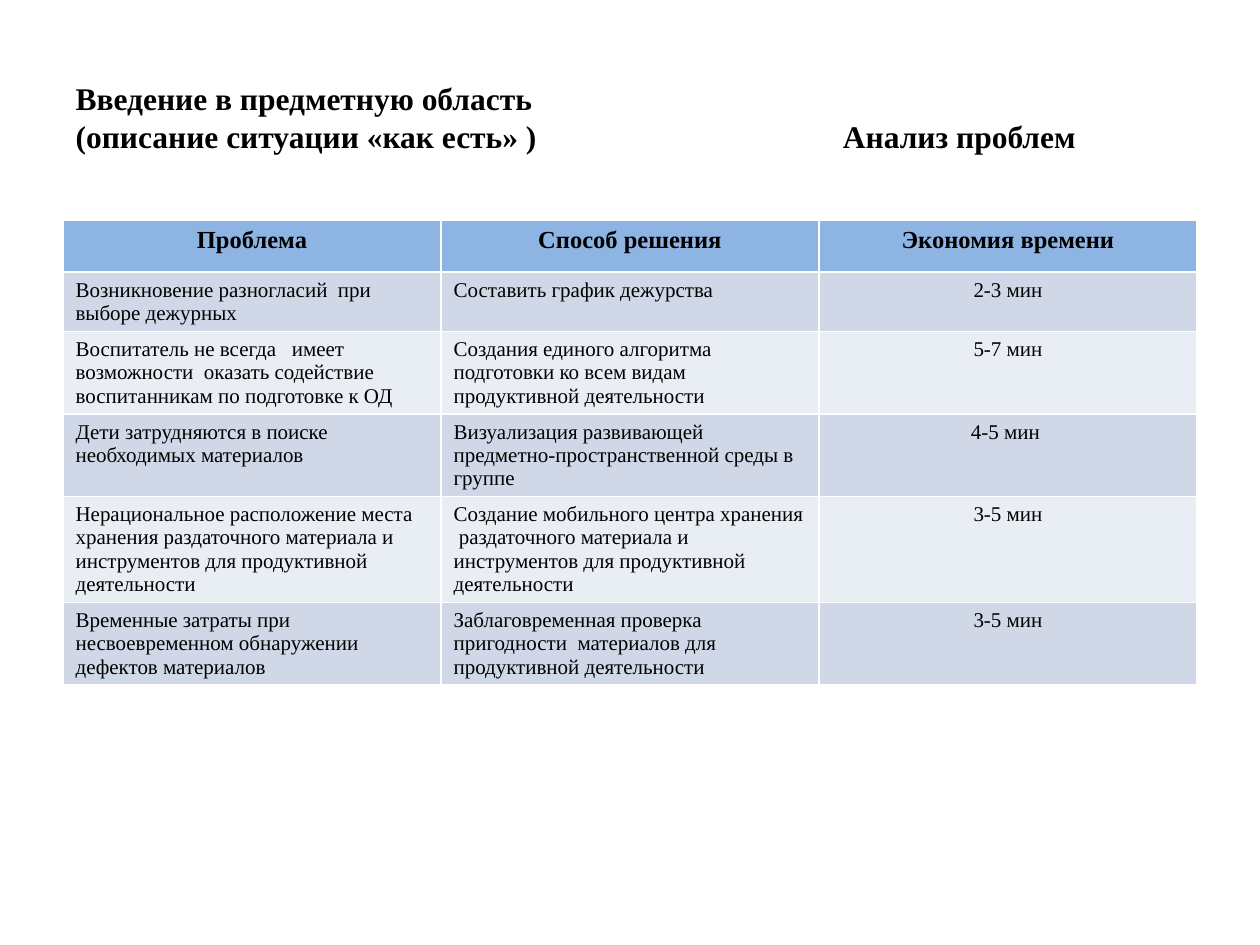
from dataclasses import dataclass

from lxml import etree
from pptx import Presentation, util as u
from pptx.dml.color import RGBColor
from pptx.enum import text
from pptx.oxml.ns import qn


@dataclass(frozen=True)
class Theme:
    font: str = "Times New Roman"
    ink: RGBColor = RGBColor(0, 0, 0)
    header_fill: RGBColor = RGBColor(0x8E, 0xB4, 0xE3)
    odd_fill: RGBColor = RGBColor(0xD0, 0xD8, 0xE8)
    even_fill: RGBColor = RGBColor(0xE9, 0xED, 0xF4)
    title_size: int = 18
    header_size: int = 14
    body_size: int = 12


THEME = Theme()

HEADINGS = ("Проблема", "Способ решения", "Экономия времени")
PROBLEMS = (
    ("Возникновение разногласий  при выборе дежурных",
     "Составить график дежурства",
     "2-3 мин"),
    ("Воспитатель не всегда   имеет возможности  оказать содействие "
     "воспитанникам по подготовке к ОД",
     "Создания единого алгоритма подготовки ко всем видам продуктивной деятельности",
     "5-7 мин"),
    ("Дети затрудняются в поиске необходимых материалов",
     "Визуализация развивающей предметно-пространственной среды в группе",
     "4-5 мин "),
    ("Нерациональное расположение места хранения раздаточного материала и "
     "инструментов для продуктивной деятельности",
     "Создание мобильного центра хранения\n"
     " раздаточного материала и инструментов для продуктивной деятельности",
     "3-5 мин"),
    ("Временные затраты при несвоевременном обнаружении дефектов материалов",
     "Заблаговременная проверка пригодности  материалов для продуктивной деятельности",
     "3-5 мин"),
)


def style_paragraph(para, size, bold, centred):
    para.alignment = text.PP_ALIGN.CENTER if centred else text.PP_ALIGN.LEFT
    para.font.name = THEME.font
    para.font.size = u.Pt(size)
    para.font.bold = bold
    para.font.color.rgb = THEME.ink


def add_tab_stop(para, position):
    properties = para._p.get_or_add_pPr()
    stops = etree.Element(qn("a:tabLst"))
    etree.SubElement(stops, qn("a:tab"), pos=str(int(position)), algn="l")
    # Tab stops come before the default run properties
    properties.insert(0, stops)


def place_title(page, left, top, width, height):
    title = page.shapes.title
    title.left, title.top, title.width, title.height = left, top, width, height
    frame = title.text_frame
    frame.word_wrap = True
    frame.vertical_anchor = text.MSO_ANCHOR.MIDDLE
    para = frame.paragraphs[0]
    para.text = "Введение в предметную область\v(описание ситуации «как есть» )\tАнализ проблем"
    style_paragraph(para, THEME.title_size, bold=True, centred=False)
    add_tab_stop(para, u.Inches(6.09))


def place_problem_table(page, left, top, width, row_height):
    rows = (HEADINGS,) + PROBLEMS
    columns = len(HEADINGS)
    table = page.shapes.add_table(
        len(rows), columns, left, top, width, row_height * len(rows)).table
    for row_index, row in enumerate(rows):
        is_header = row_index == 0
        if is_header:
            fill, size = THEME.header_fill, THEME.header_size
        else:
            fill = THEME.odd_fill if row_index % 2 else THEME.even_fill
            size = THEME.body_size
        for column, content in enumerate(row):
            cell = table.cell(row_index, column)
            cell.text = content
            cell.fill.solid()
            cell.fill.fore_color.rgb = fill
            centred = is_header or column == columns - 1
            for para in cell.text_frame.paragraphs:
                style_paragraph(para, size, is_header, centred)


def main():
    deck = Presentation()
    deck.slide_width, deck.slide_height = u.Inches(10), u.Inches(7.5)
    page = deck.slides.add_slide(deck.slide_layouts.get_by_name("Title Only"))

    # Heading, then the table of problems on the same margins
    margin, width = u.Inches(0.5), u.Inches(9)
    place_title(page, margin, u.Inches(0.3), width, u.Inches(1.25))
    place_problem_table(page, margin, u.Inches(1.75), width, u.Inches(0.41))

    deck.save("out.pptx")


if __name__ == "__main__":
    main()
